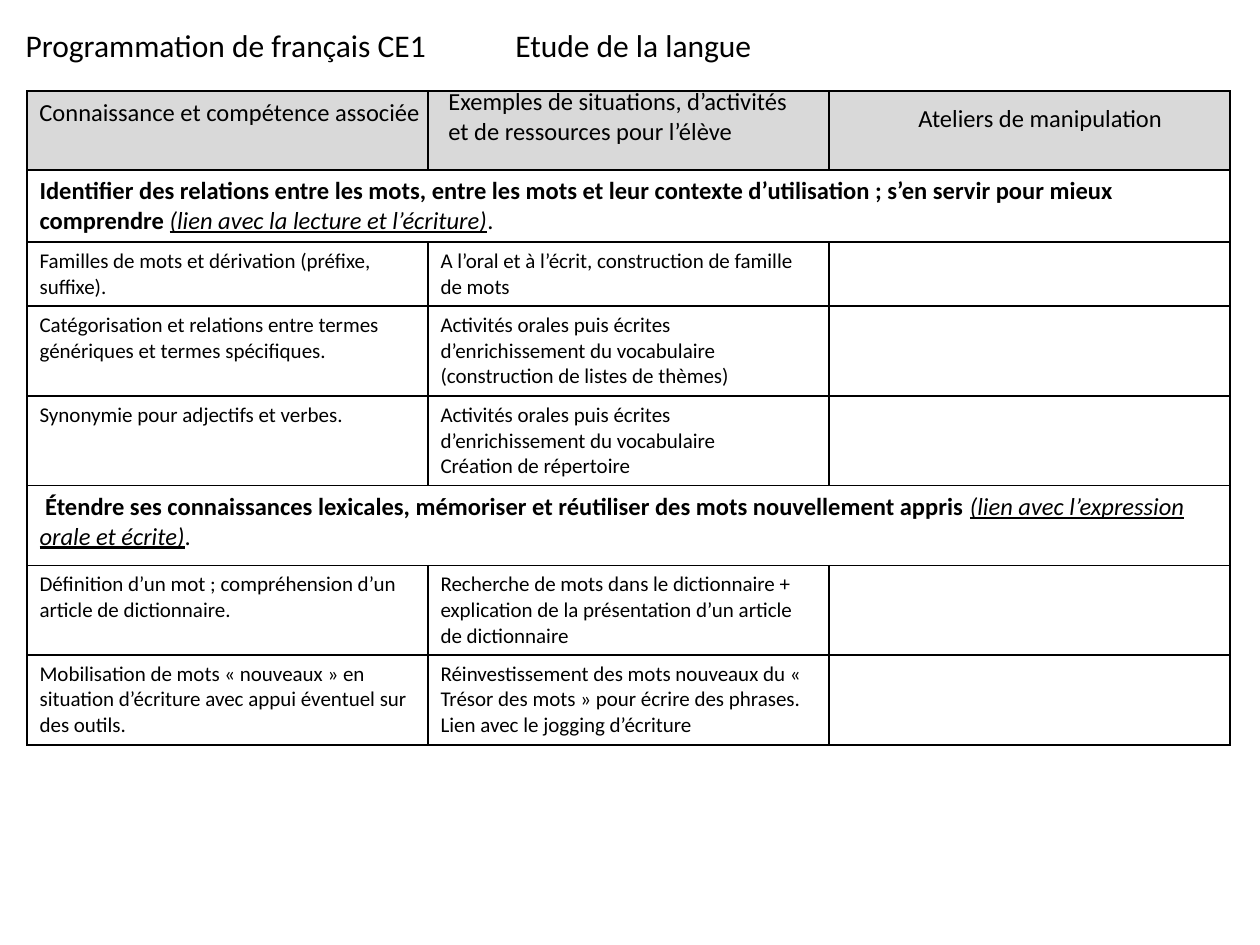
from pptx import Presentation
from pptx.dml.color import RGBColor
from pptx.enum.text import MSO_ANCHOR as Anchor, MSO_AUTO_SIZE as AutoSize, PP_ALIGN as Align
from pptx.util import Emu, Pt
from lxml.etree import fromstring

PX = 914400 / 126
NS = "http://schemas.openxmlformats.org/drawingml/2006/main"


def px(length):
    return Emu(round(length * PX))


def write(frame, paragraphs, size=12, color="000000", font="Calibri", wrap=True):
    """Each paragraph is a string or a list of (text, style) runs; style holds b, i, u."""
    frame.word_wrap = wrap
    for i, content in enumerate(paragraphs):
        paragraph = frame.paragraphs[0] if i == 0 else frame.add_paragraph()
        paragraph.alignment = Align.LEFT
        for text, style in [(content, "")] if isinstance(content, str) else content:
            run = paragraph.add_run()
            run.text = text
            run.font.name, run.font.size = font, Pt(size)
            run.font.color.rgb = RGBColor.from_string(color)
            run.font.bold, run.font.italic, run.font.underline = (k in style for k in "biu")


prs = Presentation()
prs.slide_width, prs.slide_height = px(1260), px(945)
slide = prs.slides.add_slide(prs.slide_layouts[5])

# Table content: a section is a list of runs, a lesson is a pair of cells
sections_and_lessons = [
    [("Identifier des relations entre les mots, entre les mots et leur contexte "
      "d’utilisation ; s’en servir pour mieux comprendre ", "b"),
     ("(lien avec la lecture et l’écriture)", "iu"), (".", "")],
    (["Familles de mots et dérivation (préfixe, suffixe)."],
     ["A l’oral et à l’écrit, construction de famille de mots"]),
    (["Catégorisation et relations entre termes génériques et termes spécifiques."],
     ["Activités orales puis écrites d’enrichissement du vocabulaire "
      "(construction de listes de thèmes)"]),
    (["Synonymie pour adjectifs et verbes."],
     ["Activités orales puis écrites d’enrichissement du vocabulaire",
      "Création de répertoire"]),
    [(" ", ""),
     ("Étendre ses connaissances lexicales, mémoriser et réutiliser des mots "
      "nouvellement appris ", "b"),
     ("(lien avec l’expression orale et écrite)", "iu"), (".", "")],
    (["Définition d’un mot ; compréhension d’un article de dictionnaire."],
     ["Recherche de mots dans le dictionnaire + explication de la présentation "
      "d’un article de dictionnaire"]),
    (["Mobilisation de mots « nouveaux » en situation d’écriture avec appui "
      "éventuel sur des outils."],
     ["Réinvestissement des mots nouveaux du « Trésor des mots » pour écrire des phrases.",
      "Lien avec le jogging d’écriture"]),
]
row_heights = [79, 72, 64, 90, 89, 80, 89, 90]

# Table grid
programme = slide.shapes.add_table(
    len(row_heights), 3, px(27), px(91), px(1203), px(sum(row_heights))).table
programme.first_row = programme.horz_banding = False
for column in programme.columns:
    column.width = px(401)
for row, height in zip(programme.rows, row_heights):
    row.height = px(height)

# Borders and fills
for r, row in enumerate(programme.rows):
    for cell in row.cells:
        properties = cell._tc.get_or_add_tcPr()
        for side in "LRTB":
            properties.append(fromstring(
                f'<a:ln{side} xmlns:a="{NS}" w="12700"><a:solidFill>'
                f'<a:srgbClr val="000000"/></a:solidFill></a:ln{side}>'))
        if r == 0:
            cell.fill.solid()
            cell.fill.fore_color.rgb = RGBColor.from_string("D9D9D9")
        else:
            cell.fill.background()

# Sections span the table, lessons fill the first two columns
for r, entry in enumerate(sections_and_lessons, start=1):
    if isinstance(entry, list):
        programme.cell(r, 0).merge(programme.cell(r, 2))
        write(programme.cell(r, 0).text_frame, [entry], size=14)
    else:
        for c, paragraphs in enumerate(entry):
            write(programme.cell(r, c).text_frame, paragraphs)

# Title
title = slide.shapes.title
title.left, title.top, title.width, title.height = px(13), px(20), px(432), px(51)
title.text_frame.vertical_anchor = Anchor.TOP
title.text_frame.auto_size = AutoSize.NONE
write(title.text_frame, ["Programmation de français CE1"], size=18, wrap=False)

# Subject and column headings
for left, top, width, height, size, wrap, lines in [
    (503, 20, 265, 51, 18, False, ["Etude de la langue"]),
    (27, 91, 409, 43, 14, False, ["Connaissance et compétence associée"]),
    (436, 80, 370, 72, 14, True,
     ["Exemples de situations, d’activités", "et de ressources pour l’élève"]),
    (906, 97, 272, 43, 14, False, ["Ateliers de manipulation"]),
]:
    heading = slide.shapes.add_textbox(px(left), px(top), px(width), px(height))
    heading.text_frame.auto_size = AutoSize.SHAPE_TO_FIT_TEXT
    write(heading.text_frame, lines, size=size, wrap=wrap)

prs.save("out.pptx")
